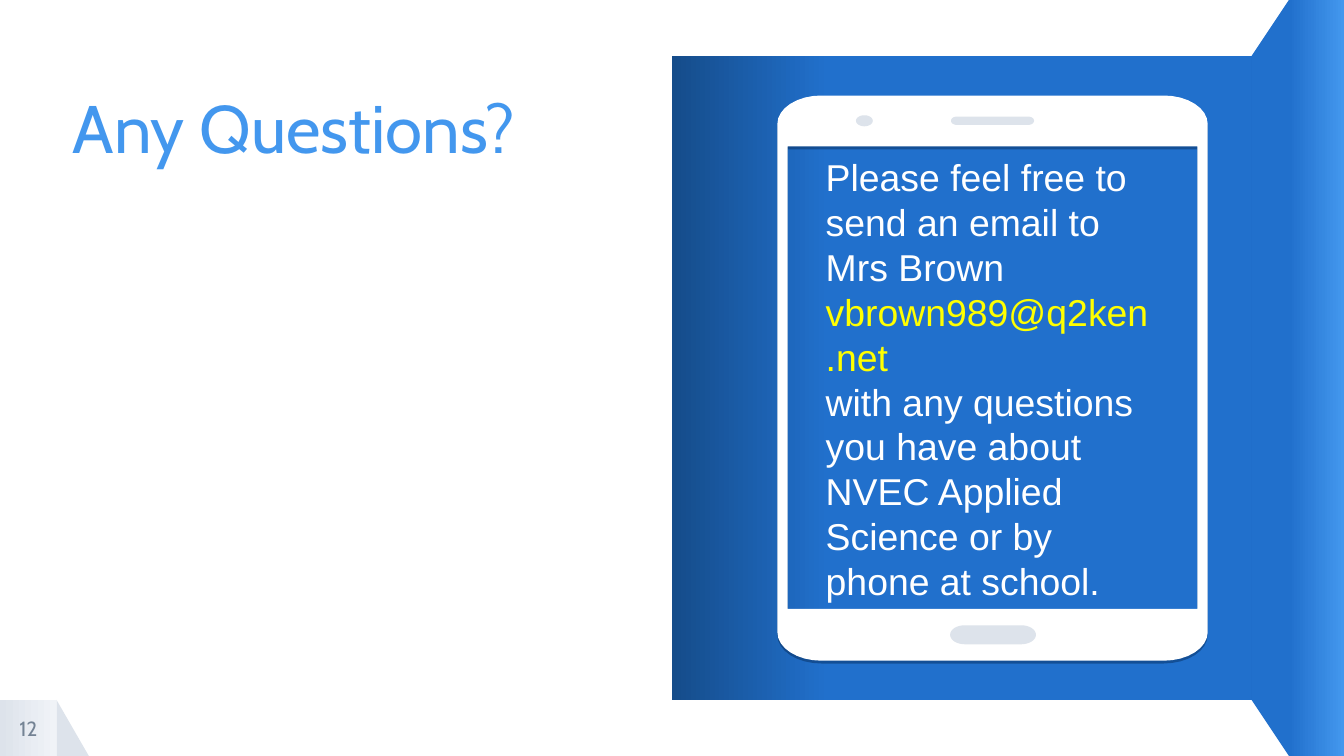
import math

import lxml.etree
import pptx
import pptx.dml.color
import pptx.enum.shapes
import pptx.enum.text
import pptx.oxml.ns
import pptx.util

Pt = pptx.util.Pt
SHAPE = pptx.enum.shapes.MSO_SHAPE
ALIGN = pptx.enum.text.PP_ALIGN
ANCHOR = pptx.enum.text.MSO_ANCHOR
FIT = pptx.enum.text.MSO_AUTO_SIZE

# Content
TITLE = "Any Questions?"
PAGE = "12"
MESSAGE = [
    [("Please feel free to send an email to Mrs Brown ", "FFFFFF"),
     ("vbrown989@q2ken.net", "FFFF00")],
    [("with any questions you have about NVEC Applied Science "
      "or by phone at school.", "FFFFFF")],
]

# Colours
BLUE, LIGHT, NAVY = "2170CC", "4397EE", "154C8A"
GREY, PALE, SLATE, WHITE = "DDE3EB", "F0F3F7", "748394", "FFFFFF"

# Layout, in points
W, H = 720, 405
MARGIN = 30
PANEL_X, FOLD_X, BAND_X = 360, 670.5, 690.5
GRADIENT_BARS = [  # box, left colour, right colour, where the blend ends
    ((0, H - MARGIN, 30.3, MARGIN), GREY, PALE, 1),
    ((BAND_X, 0, W - BAND_X, H), BLUE, LIGHT, 1),
    ((PANEL_X, MARGIN, FOLD_X - PANEL_X, H - 2 * MARGIN), NAVY, BLUE, 0.27),
]
PHONE = (416.5, 51.2, 230.5, 302.8)
SCREEN = (422, 78.5, 219.5, 247.7)
PHONE_RADII = (23.6, 15.2)
PHONE_DETAILS = [  # box, corner radii
    ((509, 335, 46, 10.2), (8, 5.1)),
    ((458.6, 61.8, 9, 5.9), (4.5, 2.95)),
    ((509.5, 62.5, 44.5, 4.4), (3, 2.2)),
]


def rgb(value):
    return pptx.dml.color.RGBColor.from_string(value)


def finish(sp, color):
    sp.shadow.inherit = False
    sp.line.fill.background()
    sp.fill.solid()
    sp.fill.fore_color.rgb = rgb(color)
    return sp


def add_preset(s, kind, box, color):
    return finish(s.shapes.add_shape(kind, *map(Pt, box)), color)


def add_outline(s, color, *contours):
    contours = [[(Pt(x), Pt(y)) for x, y in c] for c in contours]
    builder = s.shapes.build_freeform(*contours[0][0])
    builder.add_line_segments(contours[0][1:])
    for c in contours[1:]:
        builder.move_to(*c[0])
        builder.add_line_segments(c[1:])
    return finish(builder.convert_to_shape(), color)


def rounded(box, radii, steps=8):
    x, y, w, h = box
    rx, ry = radii
    centres = [(x + w - rx, y + h - ry), (x + rx, y + h - ry),
               (x + rx, y + ry), (x + w - rx, y + ry)]
    points = []
    for quarter, (cx, cy) in enumerate(centres):
        for i in range(steps + 1):
            a = (quarter + i / steps) * math.pi / 2
            points.append((cx + rx * math.cos(a), cy + ry * math.sin(a)))
    return points


def add_run(p, text, font, size, color):
    r = p.add_run()
    r.text = text
    r.font.name, r.font.size = font, Pt(size)
    r.font.color.rgb = rgb(color)


def place(sp, box):
    sp.left, sp.top, sp.width, sp.height = map(Pt, box)


def no_insets(tf):
    tf.margin_left = tf.margin_top = tf.margin_right = tf.margin_bottom = 0


prs = pptx.Presentation()
prs.slide_width, prs.slide_height = Pt(W), Pt(H)
s = prs.slides.add_slide(prs.slide_layouts[5])

# Background bars, page corner and fold
add_preset(s, SHAPE.RIGHT_TRIANGLE, (30.3, H - MARGIN, 17.3, MARGIN), GREY)
for box, start, end, stop in GRADIENT_BARS:
    sp = add_preset(s, SHAPE.RECTANGLE, box, start)
    sp.fill.gradient()
    sp.fill.gradient_angle = 0
    stops = sp.fill.gradient_stops
    for g, color, position in zip(stops, (start, end), (0, stop)):
        g.color.rgb = rgb(color)
        g.position = position
add_outline(s, BLUE, [(BAND_X, 0), (FOLD_X, MARGIN),
                      (FOLD_X, H - MARGIN), (BAND_X, H)])

# Phone with an open screen and a soft edge below
x, y, w, h = SCREEN
screen = [(x, y), (x + w, y), (x + w, y + h), (x, y + h)]
phone = add_outline(s, WHITE, rounded(PHONE, PHONE_RADII), screen)
effects = phone._element.spPr.find(pptx.oxml.ns.qn("a:effectLst"))
shadow = lxml.etree.SubElement(
    effects, pptx.oxml.ns.qn("a:outerShdw"), blurRad="0",
    dist=str(Pt(1.5)), dir="5400000", algn="ctr", rotWithShape="0")
tint = lxml.etree.SubElement(shadow, pptx.oxml.ns.qn("a:srgbClr"), val="001F46")
lxml.etree.SubElement(tint, pptx.oxml.ns.qn("a:alpha"), val="40000")
for box, radii in PHONE_DETAILS:
    add_outline(s, GREY, rounded(box, radii))

# Title
title = s.shapes.title
place(title, (39, 51, 284.5, 72.5))
tf = title.text_frame
no_insets(tf)
tf.auto_size, tf.vertical_anchor = FIT.NONE, ANCHOR.TOP
p = tf.paragraphs[0]
p.alignment, p.line_spacing = ALIGN.LEFT, 0.9
add_run(p, TITLE, "Cabin", 36, LIGHT)

# Page number
tf = s.shapes.add_textbox(*map(Pt, (0, H - MARGIN, 30.3, MARGIN))).text_frame
no_insets(tf)
tf.word_wrap, tf.vertical_anchor = True, ANCHOR.MIDDLE
p = tf.paragraphs[0]
p.alignment = ALIGN.CENTER
add_run(p, PAGE, "Cabin", 11, SLATE)

# Message on the screen
tf = s.shapes.add_textbox(*map(Pt, (435.3, 79.3, 192.3, 266.5))).text_frame
tf.word_wrap, tf.auto_size = True, FIT.SHAPE_TO_FIT_TEXT
for i, runs in enumerate(MESSAGE):
    p = tf.add_paragraph() if i else tf.paragraphs[0]
    for text, color in runs:
        add_run(p, text, "Arial", 20, color)

prs.save("out.pptx")
